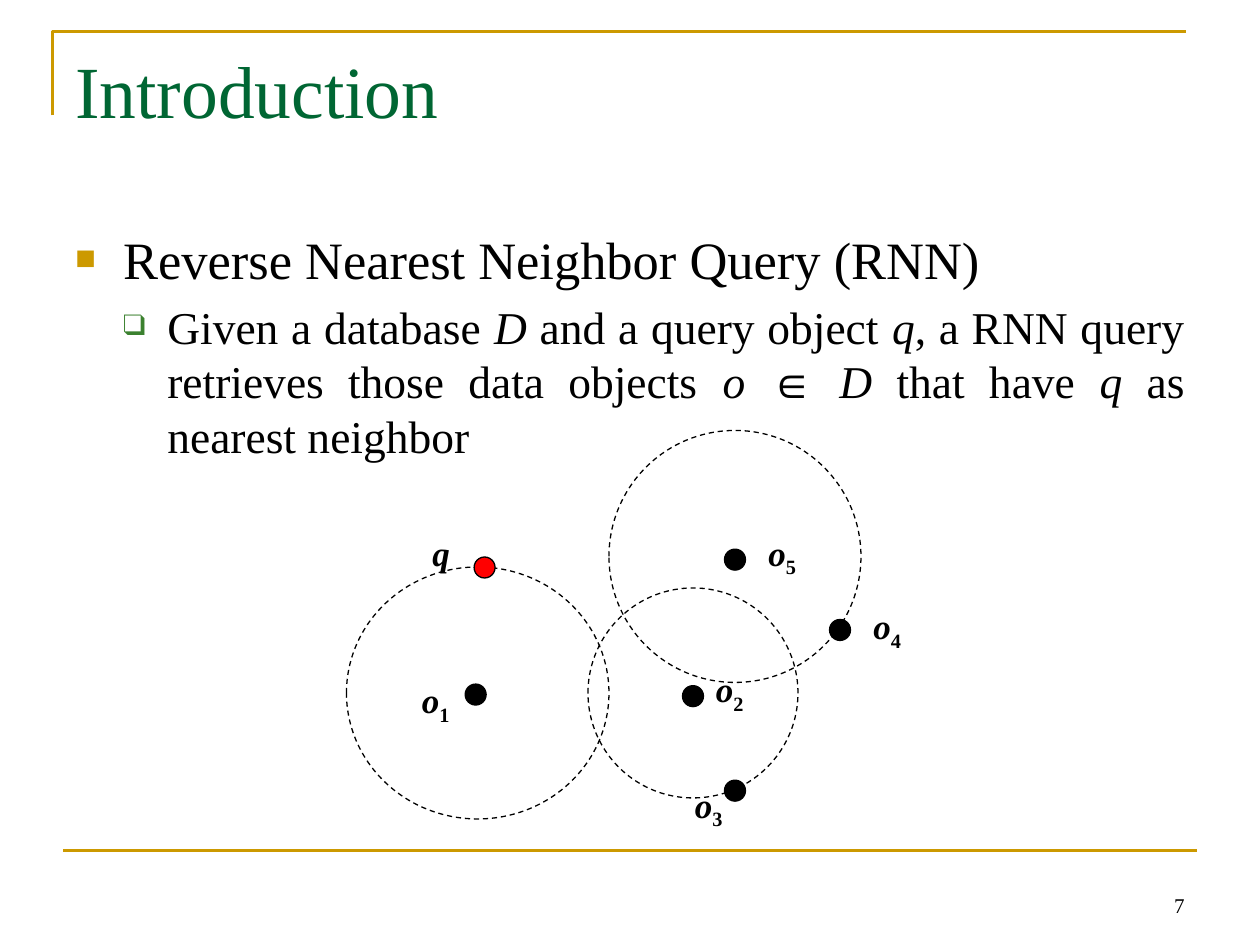
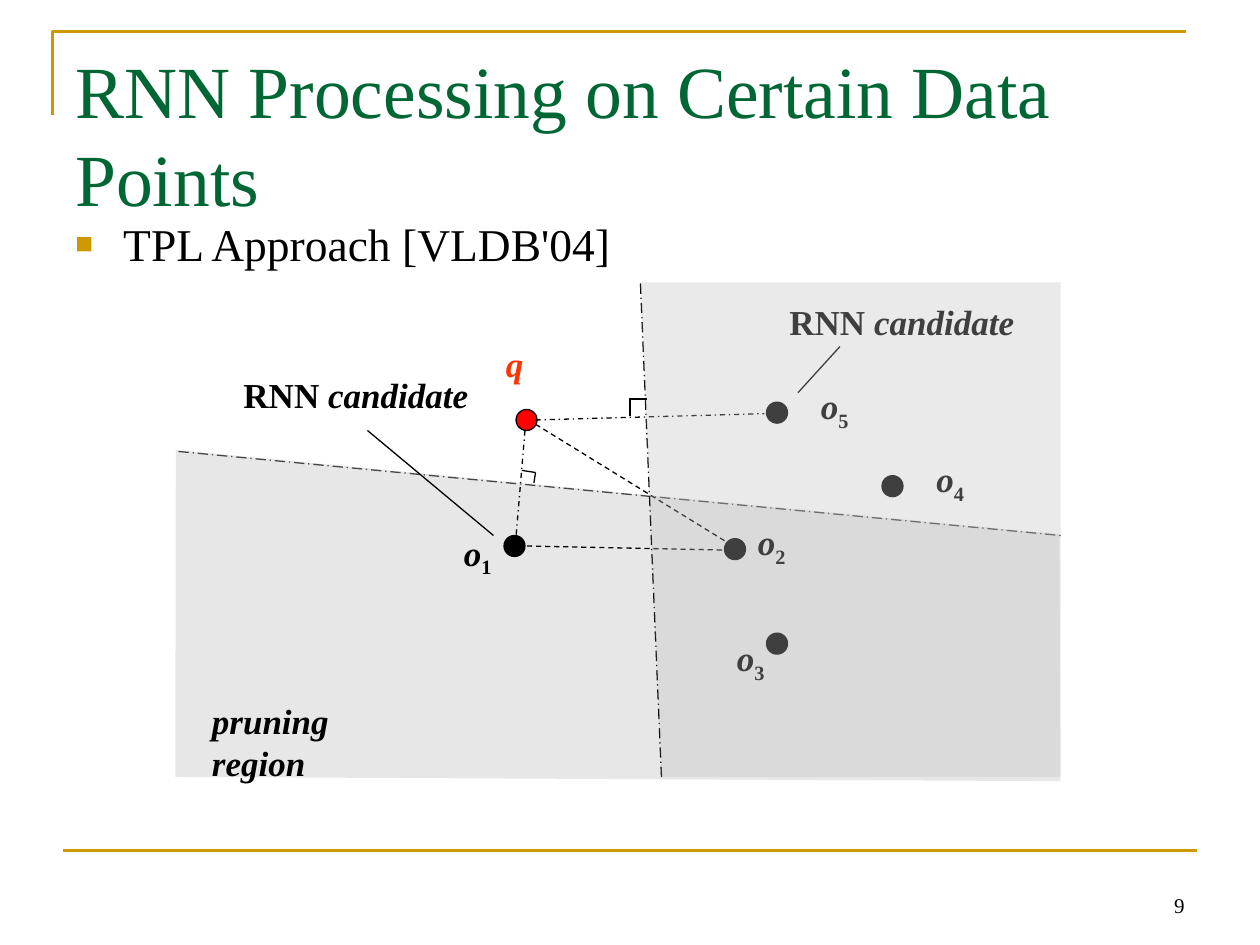
"""Build two slides on reverse nearest neighbor queries."""
from typing import NamedTuple

from lxml.etree import SubElement
from pptx import Presentation
from pptx.dml.color import RGBColor
from pptx.enum.dml import MSO_LINE_DASH_STYLE as Dash
from pptx.enum.shapes import MSO_CONNECTOR as Link, MSO_SHAPE as Form
from pptx.enum.text import MSO_ANCHOR as Anchor, MSO_AUTO_SIZE as Fit, PP_ALIGN as Align
from pptx.oxml.ns import qn
from pptx.util import Inches, Pt

WIDE, HIGH = Inches(10), Inches(7.5)
COLS = 120
CELL = WIDE // COLS
FONT = "Times New Roman"

BLACK = RGBColor(0x00, 0x00, 0x00)
RED = RGBColor(0xFF, 0x00, 0x00)
ORANGE = RGBColor(0xFF, 0x33, 0x00)
GOLD = RGBColor(0xCC, 0x99, 0x00)
GREEN = RGBColor(0x00, 0x66, 0x33)
LEAF = RGBColor(0x3B, 0x81, 0x2F)
SILVER = RGBColor(0xC0, 0xC0, 0xC0)

Spot = tuple[float, float]


class Box(NamedTuple):
    left: float
    top: float
    width: float
    height: float


class Mark(NamedTuple):
    sign: str
    color: RGBColor
    share: int
    indent: float
    hang: float


class Item(NamedTuple):
    text: str
    size: int
    mark: Mark | None = None
    align: Align | None = None


class Point(NamedTuple):
    text: str
    dot: Spot
    label: Spot
    fill: RGBColor = BLACK
    ink: RGBColor = BLACK


class Line(NamedTuple):
    start: Spot
    end: Spot
    dash: Dash | None = None


SQUARE = Mark("■", GOLD, 65, 0.38, 0.38)
HOLLOW = Mark("❑", LEAF, 65, 0.73, 0.35)

RINGS = [Box(33, 54, 25, 24), Box(56, 56, 20, 20), Box(58, 41, 24, 24)]
QUERY = [
    Point("*q*", (45.15, 53.05), (40, 50), RED),
    Point("*o*_1", (44.3, 65.15), (39, 64)),
    Point("*o*_2", (65, 65.3), (67, 63)),
    Point("*o*_3", (69, 74.3), (65, 74)),
    Point("*o*_4", (79, 59), (82, 57)),
    Point("*o*_5", (69, 52.3), (72, 50)),
]
PRUNE = [
    Point("*q*", (49.15, 39), (47, 32), RED, ORANGE),
    Point("*o*_1", (48, 51), (43, 50)),
    Point("*o*_2", (69, 51.3), (71, 49)),
    Point("*o*_3", (73, 60.3), (69, 60)),
    Point("*o*_4", (84, 45.3), (88, 43)),
    Point("*o*_5", (73, 38.3), (77, 36)),
]
LINES = [
    Line((50, 41), (49.1, 51.7), Dash.DASH_DOT),
    Line((51, 40), (72.8, 39.4), Dash.DASH_DOT),
    Line((69, 51.5), (51, 40.4), Dash.DASH),
    Line((69.6, 52.4), (50, 52), Dash.DASH),
    Line((47, 51), (35, 41)),
    Line((76, 37.4), (80, 33)),
    Line((49.7, 44.8), (51, 45)),
    Line((51, 45), (50.85, 46)),
    Line((61, 27), (63, 74), Dash.LONG_DASH_DOT),
]
CORNER = [Line((60, 38), (61.6, 38)), Line((60, 37.9), (60, 39.6))]
SPLIT = Line((17, 43), (101, 51), Dash.LONG_DASH_DOT)
LOWER = [(16.75, 42.85), (100.9, 50.9), (101, 74.4), (16.7, 74)]
RIGHT = [(61, 27), (63, 74), (101, 74), (101, 26.9), (61.3, 26.9)]


def grid(*spans: float) -> list[int]:
    """Turn grid cells into slide lengths."""
    return [round(span * CELL) for span in spans]


def bullet(para, mark: Mark) -> None:
    """Give a paragraph its bullet and hanging indent."""
    props = para._p.get_or_add_pPr()
    props.set("marL", str(Inches(mark.indent)))
    props.set("indent", str(-Inches(mark.hang)))
    tint = SubElement(props, qn("a:buClr"))
    SubElement(tint, qn("a:srgbClr"), val=str(mark.color))
    SubElement(props, qn("a:buSzPct"), val=str(mark.share * 1000))
    SubElement(props, qn("a:buFont"), typeface=FONT)
    SubElement(props, qn("a:buChar"), char=mark.sign)


def write(slide, box: Box, *items: Item, color: RGBColor = BLACK, bold: bool = False,
          wrap: bool = True, anchor: Anchor = Anchor.TOP) -> None:
    """Write items, with *italic* parts and _ before a subscript."""
    shape = slide.shapes.add_textbox(*grid(*box))
    frame = shape.text_frame
    frame.word_wrap = wrap
    frame.auto_size = Fit.NONE if wrap else Fit.SHAPE_TO_FIT_TEXT
    frame.vertical_anchor = anchor
    for rank, item in enumerate(items):
        para = frame.add_paragraph() if rank else frame.paragraphs[0]
        para.alignment = item.align
        if item.mark:
            para.space_before = Pt(item.size * 0.2)
            bullet(para, item.mark)
        for turn, part in enumerate(item.text.split("*")):
            if not part:
                continue
            run = para.add_run()
            run.text = part.removeprefix("_")
            font = run.font
            font.name, font.size = FONT, Pt(item.size)
            font.bold, font.italic = bold, turn % 2 == 1
            font.color.rgb = color
            if part.startswith("_"):
                run._r.get_or_add_rPr().set("baseline", "-25000")


def label(slide, text: str, spot: Spot, width: float = 5.16, color: RGBColor = BLACK,
          wrap: bool = False) -> None:
    """Write a bold label of the drawing."""
    write(slide, Box(*spot, width, 5.2), Item(text, 20), color=color, bold=True, wrap=wrap)


def oval(slide, box: Box, fill: RGBColor | None = None) -> None:
    """Draw a filled dot or a dashed ring."""
    shape = slide.shapes.add_shape(Form.OVAL, *grid(*box))
    shape.shadow.inherit = False
    shape.line.color.rgb, shape.line.width = BLACK, Pt(0.75)
    if fill is None:
        shape.fill.background()
        shape.line.dash_style = Dash.DASH
    else:
        shape.fill.solid()
        shape.fill.fore_color.rgb = fill


def plot(slide, point: Point) -> None:
    """Draw a data point with its label."""
    oval(slide, Box(*point.dot, 2, 2), point.fill)
    width = 4.08 if point.text == "*q*" else 5.16
    label(slide, point.text, point.label, width, point.ink)


def rule(slide, line: Line, color: RGBColor = BLACK, width: float = 0.75) -> None:
    """Draw a straight line."""
    link = slide.shapes.add_connector(Link.STRAIGHT, *grid(*line.start, *line.end))
    link.line.color.rgb, link.line.width = color, Pt(width)
    if line.dash:
        link.line.dash_style = line.dash
    SubElement(link.element.spPr, qn("a:effectLst"))


def trace(slide, spots: list[Spot], close: bool):
    """Build an outline through the given spots."""
    first, *rest = [tuple(grid(*spot)) for spot in spots]
    pen = slide.shapes.build_freeform(*first)
    pen.add_line_segments(rest, close=close)
    shape = pen.convert_to_shape()
    shape.shadow.inherit = False
    return shape


def shade(slide, spots: list[Spot], alpha: int) -> None:
    """Draw a see-through pruning region."""
    shape = trace(slide, spots, True)
    shape.line.fill.background()
    shape.fill.solid()
    shape.fill.fore_color.rgb = SILVER
    tint = shape.element.spPr.find(qn("a:solidFill")).find(qn("a:srgbClr"))
    SubElement(tint, qn("a:alpha"), val=str(alpha * 1000))


def start(deck, title: str, page: int, top: float, *items: Item):
    """Add a slide with frame, title, page number and body."""
    slide = deck.slides.add_slide(deck.slide_layouts[6])
    edge = trace(slide, [(5, 11), (5, 3), (113, 3)], False)
    edge.fill.background()
    edge.line.color.rgb, edge.line.width = GOLD, Pt(1.5)
    rule(slide, Line((6, 81), (114, 81)), GOLD, 1.5)
    write(slide, Box(86, 82, 28, 6), Item(str(page), 12, align=Align.RIGHT),
          anchor=Anchor.BOTTOM)
    write(slide, Box(6, 3.65, 108, 15), Item(title, 42), color=GREEN)
    write(slide, Box(6, top, 108, 59.4), *items)
    return slide


def intro(deck) -> None:
    """Draw the slide that defines the query."""
    slide = start(
        deck, "Introduction", 7, 21,
        Item("Reverse Nearest Neighbor Query (RNN)", 30, SQUARE),
        Item("Given a database *D* and a query object *q*, a RNN query retrieves those "
             "data objects *o* ∈ *D* that have *q* as nearest neighbor",
             26, HOLLOW, Align.JUSTIFY))
    for ring in RINGS:
        oval(slide, ring)
    for point in QUERY:
        plot(slide, point)


def method(deck) -> None:
    """Draw the slide on pruning regions."""
    slide = start(deck, "RNN Processing on Certain Data Points", 9, 20,
                  Item("TPL Approach [VLDB'04]", 26, SQUARE, Align.JUSTIFY))
    rule(slide, SPLIT)
    shade(slide, LOWER, 37)
    for point in PRUNE:
        plot(slide, point)
    for line in LINES:
        rule(slide, line)
    for spot in [(22, 35), (74, 28)]:
        label(slide, "RNN *candidate*", spot, 26, wrap=True)
    shade(slide, RIGHT, 33)
    label(slide, "*pruning region*", (19, 66), 20, wrap=True)
    for line in CORNER:
        rule(slide, line)


def main() -> None:
    """Build and save the deck."""
    deck = Presentation()
    deck.slide_width, deck.slide_height = WIDE, HIGH
    intro(deck)
    method(deck)
    deck.save("out.pptx")


if __name__ == "__main__":
    main()
